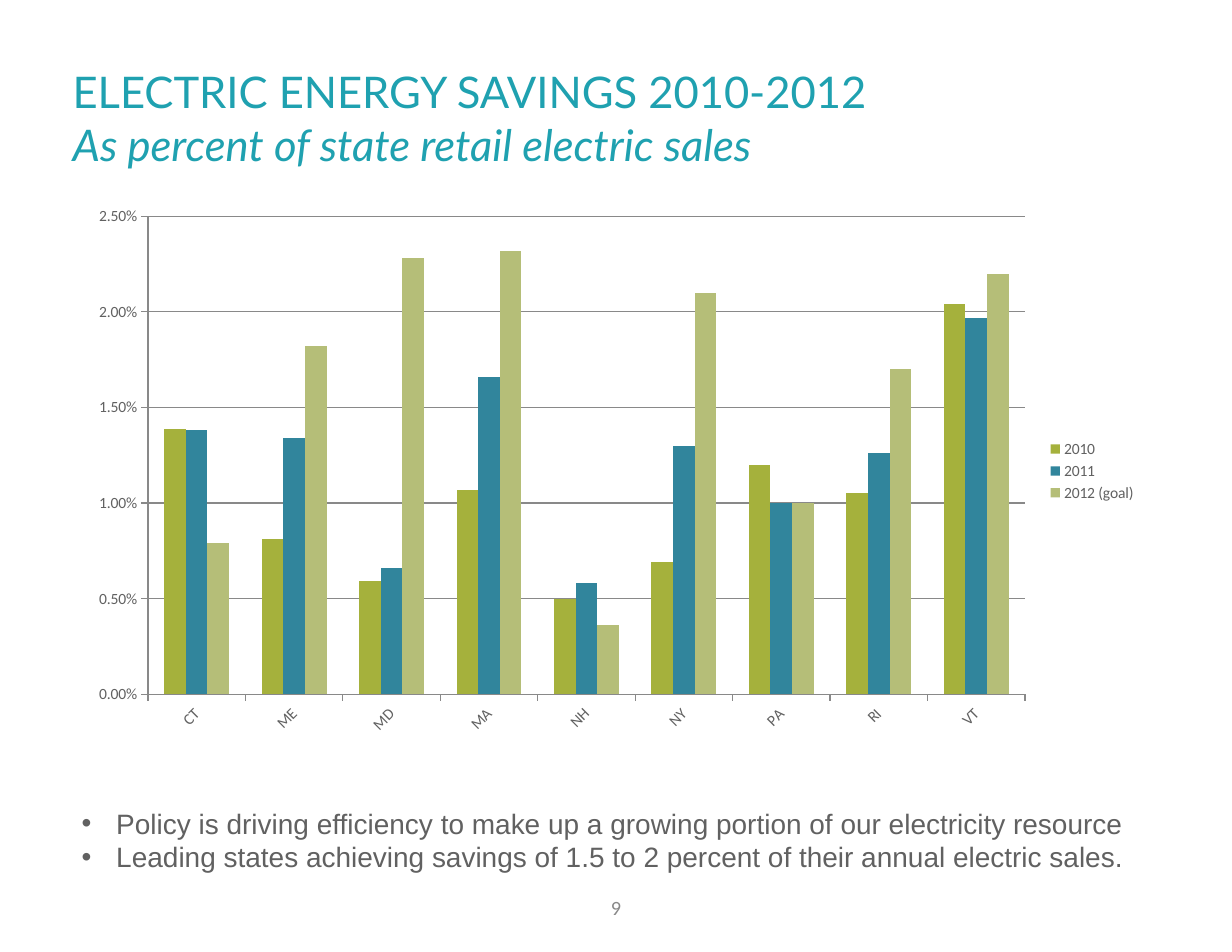
from lxml import etree
from pptx import Presentation
from pptx.chart.data import CategoryChartData
from pptx.dml.color import RGBColor
from pptx.enum.chart import XL_CHART_TYPE as ChartType, XL_LEGEND_POSITION as LegendPosition
from pptx.enum.chart import XL_TICK_MARK as TickMark
from pptx.enum.text import MSO_ANCHOR as Anchor, PP_ALIGN as Align
from pptx.oxml.ns import qn
from pptx.util import Inches, Pt

COLORS = {
    "title": "1FA1B0", "text": "616161", "number": "898989", "axis": "898989",
    "2010": "A5B13C", "2011": "31859C", "2012 (goal)": "B5BE78",
}
STATES = ["CT", "ME", "MD", "MA", "NH", "NY", "PA", "RI", "VT"]
SAVINGS = {  # percent of retail sales
    "2010": [1.39, 0.81, 0.59, 1.07, 0.50, 0.69, 1.20, 1.05, 2.04],
    "2011": [1.38, 1.34, 0.66, 1.66, 0.58, 1.30, 1.00, 1.26, 1.97],
    "2012 (goal)": [0.79, 1.82, 2.28, 2.32, 0.36, 2.10, 1.00, 1.70, 2.20],
}
BULLETS = [
    "Policy is driving efficiency to make up a growing portion of our electricity resource",
    "Leading states achieving savings of 1.5 to 2 percent of their annual electric sales.",
]


def color(name):
    return RGBColor.from_string(COLORS[name])


def set_font(font, name, size, color_name):
    font.name, font.size = name, Pt(size)
    font.color.rgb = color(color_name)


def add_text(page, area, text, font, anchor=Anchor.TOP):
    box = page.shapes.add_textbox(*map(Inches, area))
    frame = box.text_frame
    frame.word_wrap = True
    frame.vertical_anchor = anchor
    frame.text = text
    for para in frame.paragraphs:
        for span in para.runs:
            set_font(span.font, *font)
    return frame


def add_title(page, area):
    frame = add_text(page, area,
                     "ELECTRIC ENERGY SAVINGS 2010-2012\vAs percent of state retail electric sales",
                     ("Lato", 28, "title"), Anchor.MIDDLE)
    frame.paragraphs[0].runs[1].font.italic = True


def add_bullets(page, area):
    frame = add_text(page, area, "\n".join(BULLETS), ("Arial", 18, "text"))
    indent = Inches(0.31)
    for para in frame.paragraphs:
        properties = para._p.get_or_add_pPr()
        properties.set("marL", str(indent))
        properties.set("indent", str(-indent))
        etree.SubElement(properties, qn("a:buFont")).set("typeface", "Arial")
        etree.SubElement(properties, qn("a:buChar")).set("char", "•")


def add_page_number(page, area):
    frame = add_text(page, area, "9", ("Calibri", 13, "number"), Anchor.MIDDLE)
    frame.paragraphs[0].alignment = Align.CENTER


def set_plot_layout(chart, **fractions):
    """Fix the inner plot area as fractions of the chart."""
    plot_area = chart._chartSpace.chart.plotArea
    for old in plot_area.findall(qn("c:layout")):
        plot_area.remove(old)
    layout = etree.Element(qn("c:layout"))
    plot_area.insert(0, layout)
    manual = etree.SubElement(layout, qn("c:manualLayout"))
    settings = {"layoutTarget": "inner", "xMode": "edge", "yMode": "edge", **fractions}
    for tag, value in settings.items():
        etree.SubElement(manual, qn(f"c:{tag}")).set("val", str(value))


def add_savings_chart(page, area):
    data = CategoryChartData(number_format="0.00%")
    data.categories = STATES
    for year, percents in SAVINGS.items():
        data.add_series(year, [round(percent / 100, 4) for percent in percents])
    chart = page.shapes.add_chart(ChartType.COLUMN_CLUSTERED, *map(Inches, area), data).chart
    set_font(chart.font, "Calibri", 10, "text")
    chart.has_title = False
    chart.has_legend = True
    chart.legend.position = LegendPosition.RIGHT
    chart.legend.include_in_layout = False
    set_plot_layout(chart, x=0.065, y=0.035, w=0.82, h=0.873)

    # Columns
    plot = chart.plots[0]
    plot.gap_width, plot.overlap = 150, 0
    plot.vary_by_categories = False
    for series in plot.series:
        series.format.fill.solid()
        series.format.fill.fore_color.rgb = color(series.name)

    # Axes and gridlines
    states, percents = chart.category_axis, chart.value_axis
    percents.minimum_scale, percents.maximum_scale, percents.major_unit = 0, 0.025, 0.005
    percents.has_major_gridlines = True
    percents.tick_labels.number_format = "0.00%"
    percents.tick_labels.number_format_is_linked = False
    for axis in (states, percents):
        axis.major_tick_mark = TickMark.OUTSIDE
        axis.format.line.color.rgb = color("axis")
    percents.major_gridlines.format.line.color.rgb = color("axis")
    set_font(states.tick_labels.font, "Calibri", 10, "text")
    states._element.find(qn("c:txPr")).find(qn("a:bodyPr")).set("rot", "-2700000")


def main():
    deck = Presentation()
    deck.slide_width, deck.slide_height = Inches(11), Inches(8.5)
    page = deck.slides.add_slide(deck.slide_layouts[6])
    add_title(page, (0.55, 0.34, 9.9, 1.42))
    add_savings_chart(page, (0.7, 1.76, 9.55, 4.89))
    add_bullets(page, (0.63, 7.15, 10.03, 0.71))
    add_page_number(page, (3.76, 7.88, 3.48, 0.45))
    deck.save("out.pptx")


if __name__ == "__main__":
    main()
